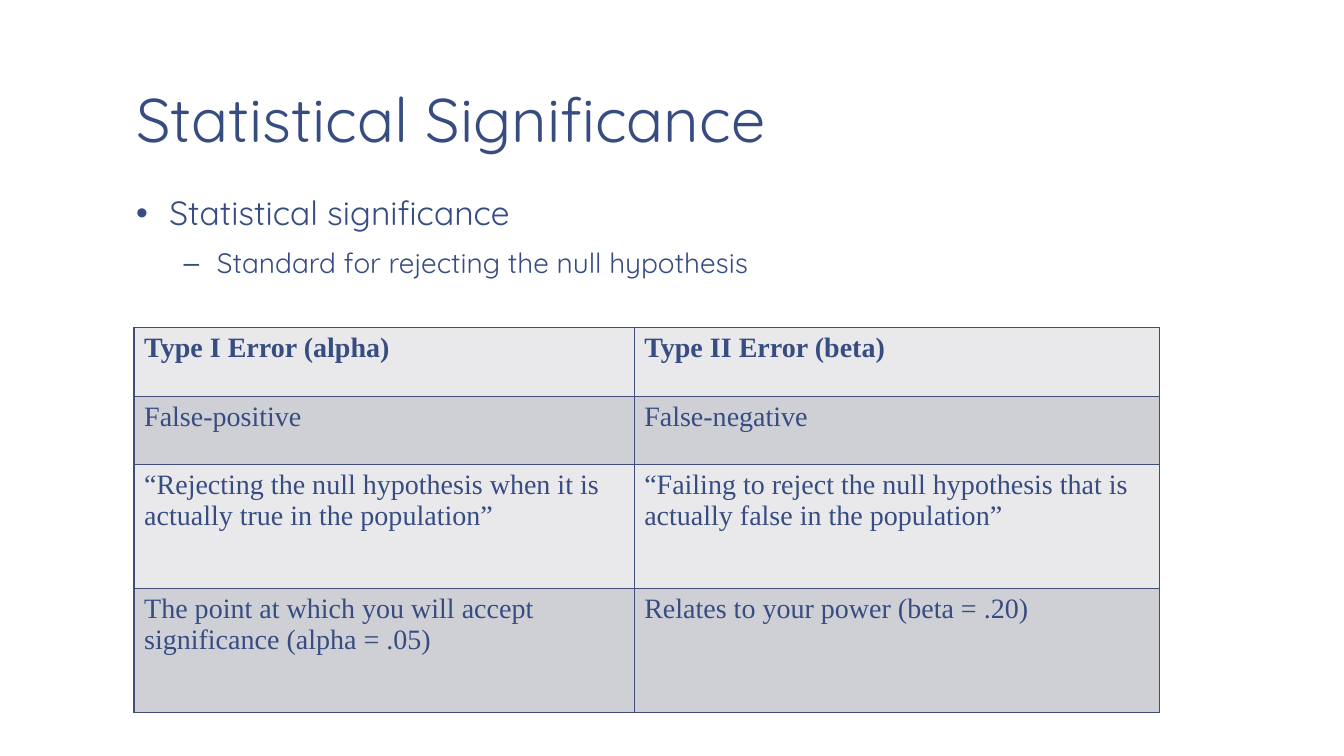
from dataclasses import dataclass

from lxml import etree
from pptx import Presentation
from pptx.dml.color import RGBColor
from pptx.enum.text import MSO_ANCHOR
from pptx.oxml.ns import qn
from pptx.util import Inches, Pt

BOTTOM, TOP = MSO_ANCHOR.BOTTOM, MSO_ANCHOR.TOP


@dataclass(frozen=True)
class Theme:
    ink: str = "374C81"
    border: str = "414E77"
    bands: tuple = ("E9E9EC", "CFD0D6")
    display: str = "Quicksand"
    serif: str = "Times New Roman"
    title: int = 44
    bullet: int = 24
    body: int = 20


THEME = Theme()


def write(p, text, size, font=THEME.display, bold=False, spacing=None,
          before=None, bullet=None, indent=0):
    """Put formatted text, with an optional hanging bullet, in a paragraph."""
    if bullet:
        pPr = p._p.get_or_add_pPr()
        pPr.set("marL", str(Inches(indent)))
        pPr.set("indent", str(Inches(-0.33)))
        etree.SubElement(pPr, qn("a:buFont"), typeface="Arial")
        etree.SubElement(pPr, qn("a:buChar"), char=bullet)
    if spacing is not None:
        p.line_spacing = spacing
    if before is not None:
        p.space_before = Pt(before)
    r = p.add_run()
    r.text = text
    r.font.name, r.font.size, r.font.bold = font, Pt(size), bold
    r.font.color.rgb = RGBColor.from_string(THEME.ink)


def add_box(s, top, height, anchor):
    """Add a text box in the slide's main column and return its frame."""
    tf = s.shapes.add_textbox(Inches(1.22), Inches(top), Inches(11.11), Inches(height)).text_frame
    tf.word_wrap = True
    tf.vertical_anchor = anchor
    tf.margin_left = tf.margin_right = Inches(0.13)
    tf.margin_top = tf.margin_bottom = Inches(0.07)
    return tf


prs = Presentation()
prs.slide_width, prs.slide_height = Inches(13.33), Inches(7.5)
s = prs.slides.add_slide(prs.slide_layouts[6])

# Title
tf = add_box(s, 0.08, 1.53, BOTTOM)
write(tf.paragraphs[0], "Statistical Significance", THEME.title, spacing=0.85)

# Bullets
tf = add_box(s, 1.86, 1.2, TOP)
write(tf.paragraphs[0], "Statistical significance", THEME.bullet,
      spacing=0.95, bullet="•", indent=0.33)
write(tf.add_paragraph(), "Standard for rejecting the null hypothesis", THEME.body,
      spacing=0.95, before=10.7, bullet="–", indent=0.8)

# Error comparison table
ROWS = [
    (0.68, "Type I Error (alpha)", "Type II Error (beta)"),
    (0.68, "False-positive", "False-negative"),
    (1.23, "“Rejecting the null hypothesis when it is actually true in the population”",
     "“Failing to reject the null hypothesis that is actually false in the population”"),
    (1.23, "The point at which you will accept significance (alpha = .05)",
     "Relates to your power (beta = .20)"),
]
COLUMNS = (4.96, 5.21)
table = s.shapes.add_table(len(ROWS), len(COLUMNS), Inches(1.33), Inches(3.25),
                           Inches(sum(COLUMNS)), Inches(3.82)).table
for column, width in zip(table.columns, COLUMNS):
    column.width = Inches(width)

for i, (height, *texts) in enumerate(ROWS):
    table.rows[i].height = Inches(height)
    for j, text in enumerate(texts):
        cell = table.cell(i, j)
        write(cell.text_frame.paragraphs[0], text, THEME.body,
              font=THEME.serif, bold=i == 0)
        # Borders come before the fill in the cell properties
        tcPr = cell._tc.get_or_add_tcPr()
        for side in ("lnL", "lnR", "lnT", "lnB"):
            ln = etree.SubElement(tcPr, qn(f"a:{side}"), w=str(Pt(1)))
            fill = etree.SubElement(ln, qn("a:solidFill"))
            etree.SubElement(fill, qn("a:srgbClr"), val=THEME.border)
        cell.fill.solid()
        cell.fill.fore_color.rgb = RGBColor.from_string(THEME.bands[i % 2])

prs.save("out.pptx")
